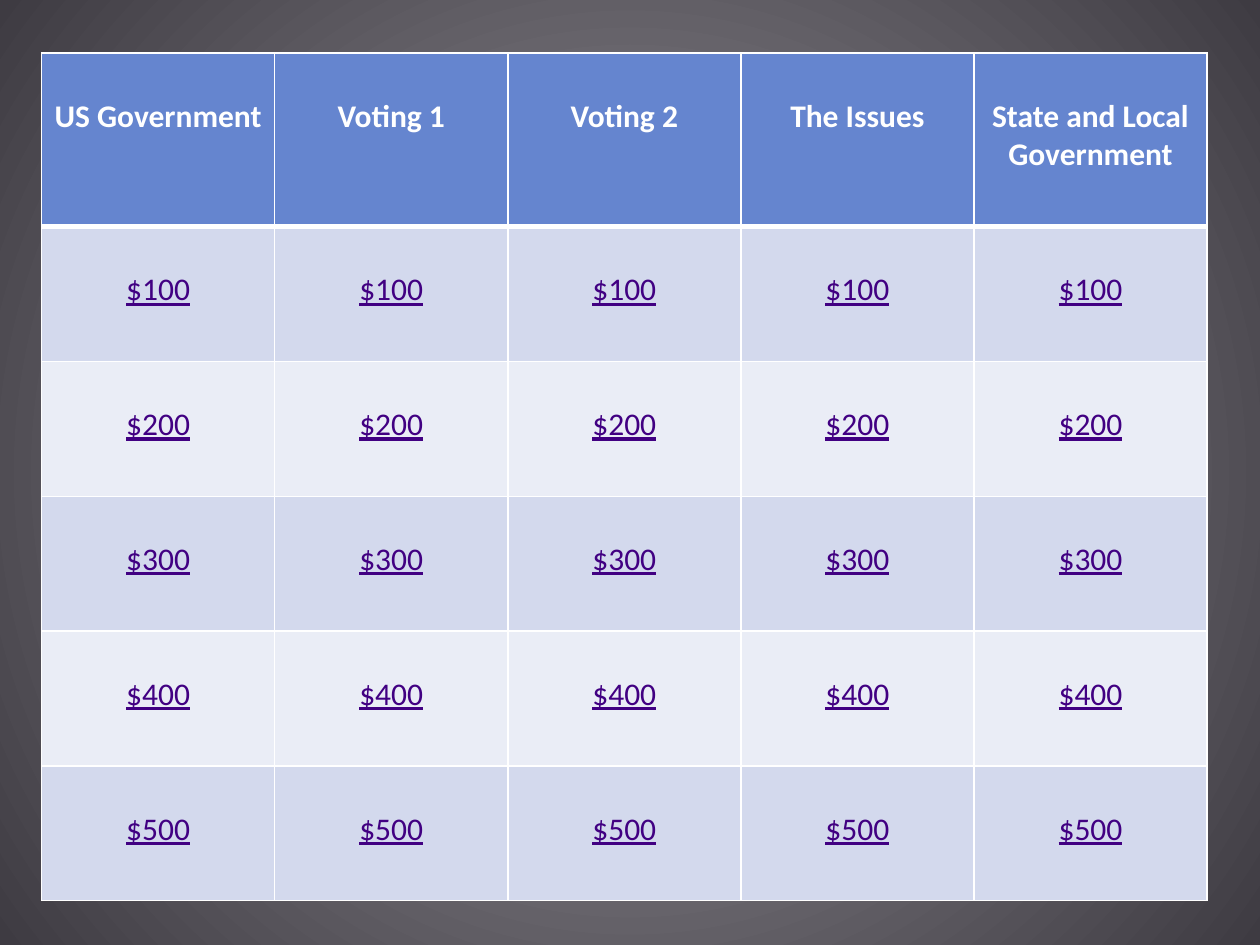
from pptx import Presentation, util as u
from pptx.dml.color import RGBColor
from pptx.enum import text
from pptx.oxml import parse_xml
from pptx.oxml.ns import nsdecls, qn

COLORS = {
    "glow": "97949D", "edge": "3E3B42", "head": "6585CF",
    "odd": "D3D9ED", "even": "EAEDF6", "white": "FFFFFF", "link": "410082",
}
TOPICS = ["US Government", "Voting 1", "Voting 2", "The Issues",
          "State and Local Government"]
PRIZES = [100, 200, 300, 400, 500]


def rgb(name):
    return RGBColor.from_string(COLORS[name])


def set_back(slide):
    """Fill the background with a gradient that darkens from the centre."""
    fill = slide.background.fill
    fill.gradient()
    for stop, name in zip(fill.gradient_stops, ("glow", "edge")):
        stop.color.rgb = rgb(name)
    grad = slide.element.find(".//" + qn("a:gradFill"))
    grad.replace(grad.find(qn("a:lin")), parse_xml(
        f'<a:path {nsdecls("a")} path="circle"><a:fillToRect '
        'l="50000" t="50000" r="50000" b="50000"/></a:path>'))


def set_lines(cell, top, bottom):
    """Draw white cell borders; top and bottom widths are in points."""
    props = cell._tc.get_or_add_tcPr()
    widths = {"L": 1, "R": 1, "T": top, "B": bottom}
    for spot, (side, width) in enumerate(widths.items()):
        props.insert(spot, parse_xml(
            f'<a:ln{side} {nsdecls("a")} w="{u.Pt(width)}"><a:solidFill>'
            f'<a:srgbClr val="{COLORS["white"]}"/></a:solidFill></a:ln{side}>'))


def set_cell(cell, words, row):
    head = row == 0
    cell.fill.solid()
    cell.fill.fore_color.rgb = rgb("head" if head else "odd" if row % 2 else "even")
    set_lines(cell, 3 if row == 1 else 1, 3 if head else 1)
    # The text starts one line below the usual top margin
    cell.margin_top = u.Inches(0.35)
    cell.text_frame.text = words
    para = cell.text_frame.paragraphs[0]
    para.alignment = text.PP_ALIGN.CENTER
    font = para.runs[0].font
    font.name, font.size = "Calibri", u.Pt(18)
    font.bold, font.underline = head, not head
    font.color.rgb = rgb("white" if head else "link")


def add_board(slide):
    rows = [TOPICS] + [[f"${prize}"] * len(TOPICS) for prize in PRIZES]
    table = slide.shapes.add_table(
        len(rows), len(TOPICS), u.Inches(0.33), u.Inches(0.42),
        u.Inches(9.25), u.Inches(6.75)).table
    for col in table.columns:
        col.width = u.Inches(1.85)
    for r, line in enumerate(rows):
        table.rows[r].height = u.Inches(1.07 if r else 1.38)
        for c, words in enumerate(line):
            set_cell(table.cell(r, c), words, r)


def main():
    deck = Presentation()
    deck.slide_width, deck.slide_height = u.Inches(10), u.Inches(7.5)
    slide = deck.slides.add_slide(deck.slide_layouts[6])
    set_back(slide)
    add_board(slide)
    deck.save("out.pptx")


if __name__ == "__main__":
    main()
